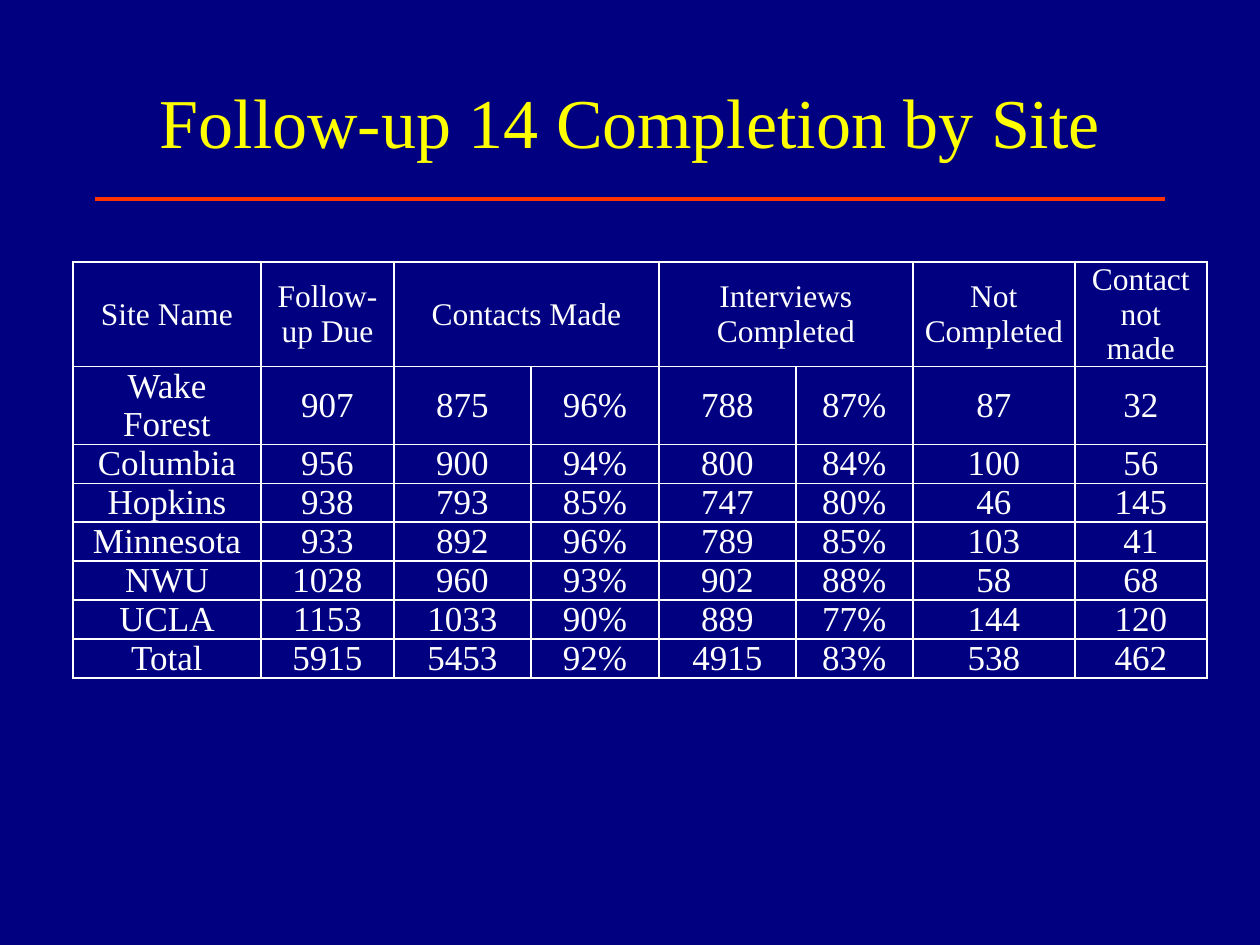
from dataclasses import dataclass

from lxml.etree import SubElement
from pptx import Presentation
from pptx.dml.color import RGBColor
from pptx.enum.shapes import MSO_CONNECTOR
from pptx.enum.text import MSO_ANCHOR, MSO_AUTO_SIZE, PP_ALIGN
from pptx.oxml.ns import qn
from pptx.util import Emu, Pt

TITLE = "Follow-up 14 Completion by Site"
HEADERS = [
    ("Site Name", 1),
    ("Follow-up Due", 1),
    ("Contacts Made", 2),
    ("Interviews Completed", 2),
    ("Not Completed", 1),
    ("Contact not made", 1),
]
SITES = [
    ("Wake Forest", "907", "875", "96%", "788", "87%", "87", "32"),
    ("Columbia", "956", "900", "94%", "800", "84%", "100", "56"),
    ("Hopkins", "938", "793", "85%", "747", "80%", "46", "145"),
    ("Minnesota", "933", "892", "96%", "789", "85%", "103", "41"),
    ("NWU", "1028", "960", "93%", "902", "88%", "58", "68"),
    ("UCLA", "1153", "1033", "90%", "889", "77%", "144", "120"),
    ("Total", "5915", "5453", "92%", "4915", "83%", "538", "462"),
]

SLIDE_SIZE = (1260, 945)
TITLE_BOX = (95, 42, 1070, 157)
RULE_Y = 199
TABLE_ORIGIN = (73, 262)
COLUMN_WIDTHS = [188, 133, 137, 128, 137, 117, 162, 132]
ROW_HEIGHTS = [104, 77] + [38] * 6
CELL_MARGIN = 9


@dataclass(frozen=True)
class Theme:
    font: str = "Times New Roman"
    background: str = "000080"
    title: str = "FFFF00"
    rule: str = "FF3300"
    text: str = "FFFFFF"
    border: str = "FFFFFF"
    title_size: int = 40
    header_size: int = 18
    body_size: int = 20
    rule_width: int = 2
    border_width: int = 1


THEME = Theme()


def px(length):
    return Emu(round(length * 914400 / 126))


def format_paragraph(paragraph, size, color):
    paragraph.alignment = PP_ALIGN.CENTER
    paragraph.font.name = THEME.font
    paragraph.font.size = Pt(size)
    paragraph.font.color.rgb = RGBColor.from_string(color)


def add_title(slide):
    title = slide.shapes.title
    title.left, title.top, title.width, title.height = map(px, TITLE_BOX)
    frame = title.text_frame
    frame.text = TITLE
    frame.word_wrap = True
    frame.auto_size = MSO_AUTO_SIZE.NONE
    frame.vertical_anchor = MSO_ANCHOR.MIDDLE
    format_paragraph(frame.paragraphs[0], THEME.title_size, THEME.title)


def add_rule(slide):
    left, _, width, _ = TITLE_BOX
    rule = slide.shapes.add_connector(
        MSO_CONNECTOR.STRAIGHT, px(left), px(RULE_Y), px(left + width), px(RULE_Y)
    )
    rule.line.color.rgb = RGBColor.from_string(THEME.rule)
    rule.line.width = Pt(THEME.rule_width)
    SubElement(rule._element.spPr, qn("a:effectLst"))


def add_borders(cell):
    properties = cell._tc.get_or_add_tcPr()
    for index, side in enumerate(("a:lnL", "a:lnR", "a:lnT", "a:lnB")):
        line = properties.makeelement(qn(side), {"w": str(Pt(THEME.border_width))})
        fill = SubElement(line, qn("a:solidFill"))
        SubElement(fill, qn("a:srgbClr"), val=THEME.border)
        properties.insert(index, line)


def format_cell(cell, size):
    cell.fill.background()
    cell.vertical_anchor = MSO_ANCHOR.MIDDLE
    cell.margin_left = cell.margin_right = px(CELL_MARGIN)
    cell.margin_top = cell.margin_bottom = 0
    format_paragraph(cell.text_frame.paragraphs[0], size, THEME.text)
    add_borders(cell)


def add_site_table(slide):
    table = slide.shapes.add_table(
        len(ROW_HEIGHTS), len(COLUMN_WIDTHS), *map(px, TABLE_ORIGIN),
        px(sum(COLUMN_WIDTHS)), px(sum(ROW_HEIGHTS)),
    ).table
    table.first_row = table.horz_banding = False
    for column, width in zip(table.columns, COLUMN_WIDTHS):
        column.width = px(width)
    for row, height in zip(table.rows, ROW_HEIGHTS):
        row.height = px(height)

    start = 0
    for label, span in HEADERS:
        cell = table.cell(0, start)
        cell.text = label
        if span > 1:
            cell.merge(table.cell(0, start + span - 1))
        start += span
    for row_index, site in enumerate(SITES, start=1):
        for column_index, value in enumerate(site):
            table.cell(row_index, column_index).text = value

    for row_index, row in enumerate(table.rows):
        for cell in row.cells:
            format_cell(cell, THEME.body_size if row_index else THEME.header_size)


def main():
    presentation = Presentation()
    presentation.slide_width, presentation.slide_height = map(px, SLIDE_SIZE)
    slide = presentation.slides.add_slide(presentation.slide_layouts.get_by_name("Title Only"))
    slide.background.fill.solid()
    slide.background.fill.fore_color.rgb = RGBColor.from_string(THEME.background)
    add_rule(slide)
    add_title(slide)
    add_site_table(slide)
    presentation.save("out.pptx")


if __name__ == "__main__":
    main()
